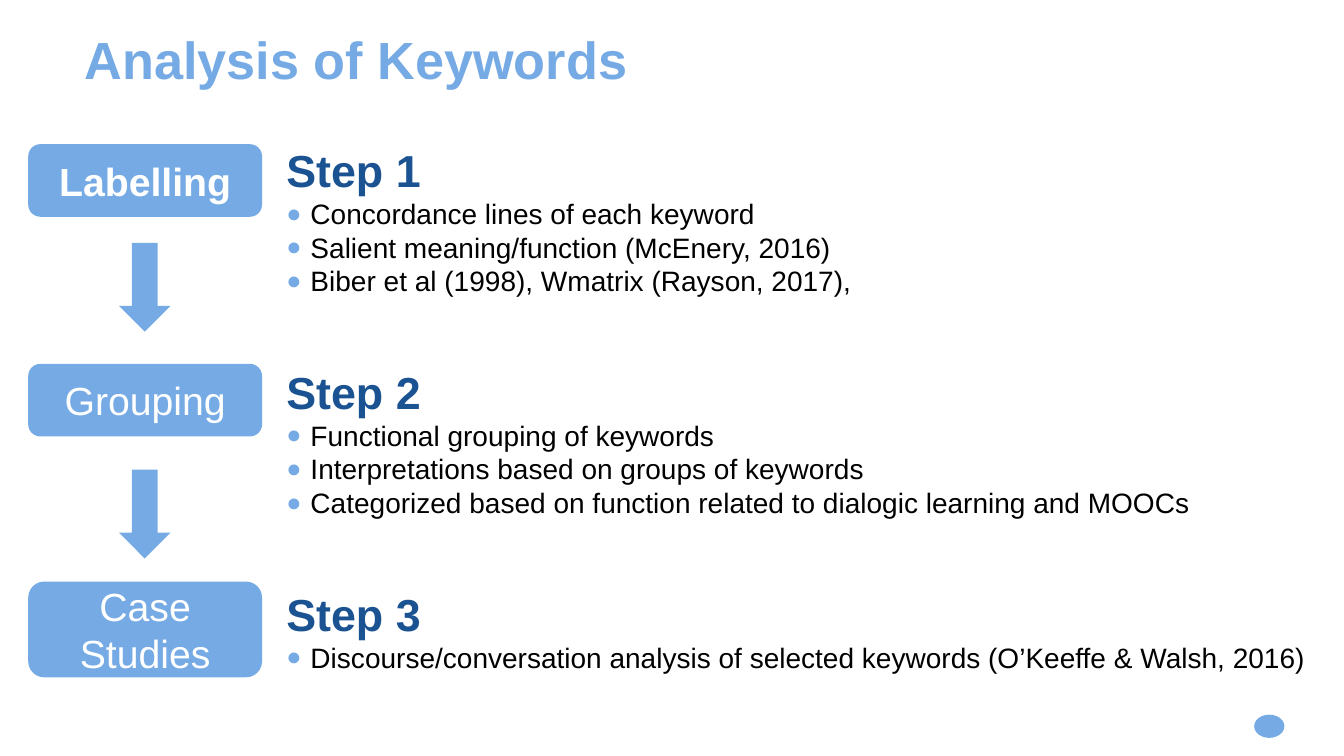
from lxml.etree import SubElement
from pptx import Presentation
from pptx.dml.color import RGBColor
from pptx.enum.shapes import MSO_SHAPE
from pptx.enum.text import MSO_ANCHOR, MSO_AUTO_SIZE, PP_ALIGN
from pptx.oxml.ns import qn
from pptx.util import Inches, Pt

COLORS = {"sky": "75AAE5", "navy": "1B5392", "black": "000000", "white": "FFFFFF"}

STAGES = [
    ("Labelling", True, 19.07, 9.6),
    ("Grouping", False, 48.13, 9.6),
    ("Case Studies", False, 76.93, 12.67),
]
ARROW_TOPS = [32.13, 62.13]

STEPS = [
    ("Step 1", [
        "Concordance lines of each keyword",
        "Salient meaning/function (McEnery, 2016)",
        "Biber et al (1998), Wmatrix (Rayson, 2017),",
    ]),
    ("Step 2", [
        "Functional grouping of keywords",
        "Interpretations based on groups of keywords",
        "Categorized based on function related to dialogic learning and MOOCs",
    ]),
    ("Step 3", [
        "Discourse/conversation analysis of selected keywords (O’Keeffe & Walsh, 2016)",
    ]),
]


class SlideBuilder:
    font = "Arial"

    def __init__(self, prs):
        self.prs = prs
        self.s = prs.slides.add_slide(prs.slide_layouts[1])

    def place(self, x, y, w, h):
        width, height = self.prs.slide_width, self.prs.slide_height
        return [round(share * size / 100) for share, size in
                ((x, width), (y, height), (w, width), (h, height))]

    def run(self, p, text, size, color, bold=False):
        r = p.add_run()
        r.text = text
        r.font.name = self.font
        r.font.size = Pt(size)
        r.font.bold = bold
        r.font.color.rgb = RGBColor.from_string(COLORS[color])

    def frame(self, sp, box, anchor):
        sp.left, sp.top, sp.width, sp.height = self.place(*box)
        tf = sp.text_frame
        tf.margin_left = tf.margin_top = tf.margin_right = tf.margin_bottom = 0
        tf.word_wrap = True
        tf.auto_size = MSO_AUTO_SIZE.NONE
        tf.vertical_anchor = anchor
        return tf

    def title(self, text, box):
        p = self.frame(self.s.shapes.title, box, MSO_ANCHOR.TOP).paragraphs[0]
        p.alignment = PP_ALIGN.LEFT
        p.line_spacing = Pt(43.5)
        self.run(p, text, 37.3, "sky", True)

    def bullet(self, p, char=None):
        pPr = p._p.get_or_add_pPr()
        indent = Inches(0.24) if char else 0
        pPr.set("marL", str(indent))
        pPr.set("indent", str(-indent))
        if not char:
            SubElement(pPr, qn("a:buNone"))
            return
        color = SubElement(pPr, qn("a:buClr"))
        SubElement(color, qn("a:srgbClr"), val=COLORS["sky"])
        SubElement(pPr, qn("a:buSzPct"), val="90000")
        SubElement(pPr, qn("a:buFont"), typeface=self.font)
        SubElement(pPr, qn("a:buChar"), char=char)

    def steps(self, steps, box):
        tf = self.frame(self.s.placeholders[1], box, MSO_ANCHOR.MIDDLE)
        for i, (heading, points) in enumerate(steps):
            p = tf.add_paragraph() if i else tf.paragraphs[0]
            p.space_before = Pt(48 if i else 0)
            self.bullet(p)
            self.run(p, heading, 32, "navy", True)
            for point in points:
                p = tf.add_paragraph()
                p.space_before = Pt(0)
                self.bullet(p, "●")
                self.run(p, point, 20, "black")

    def shape(self, kind, box):
        sp = self.s.shapes.add_shape(kind, *self.place(*box))
        sp.shadow.inherit = False
        sp.fill.solid()
        sp.fill.fore_color.rgb = RGBColor.from_string(COLORS["sky"])
        sp.line.fill.background()
        return sp

    def stage(self, text, bold, box):
        tf = self.shape(MSO_SHAPE.FLOWCHART_ALTERNATE_PROCESS, box).text_frame
        tf.word_wrap = True
        tf.vertical_anchor = MSO_ANCHOR.MIDDLE
        p = tf.paragraphs[0]
        p.alignment = PP_ALIGN.CENTER
        self.run(p, text, 28, "white", bold)


def main():
    prs = Presentation()
    prs.slide_width, prs.slide_height = Inches(13.33), Inches(7.5)
    slide = SlideBuilder(prs)
    slide.shape(MSO_SHAPE.OVAL, (93.32, 94.53, 2.25, 3.07))
    slide.title("Analysis of Keywords", (6.3, 3.87, 73.37, 7.33))
    slide.steps(STEPS, (21.3, 18.27, 82.15, 71.47))
    for text, bold, top, height in STAGES:
        slide.stage(text, bold, (2.1, top, 17.4, height))
    for top in ARROW_TOPS:
        slide.shape(MSO_SHAPE.DOWN_ARROW, (8.85, top, 3.83, 11.73))
    prs.save("out.pptx")


if __name__ == "__main__":
    main()
